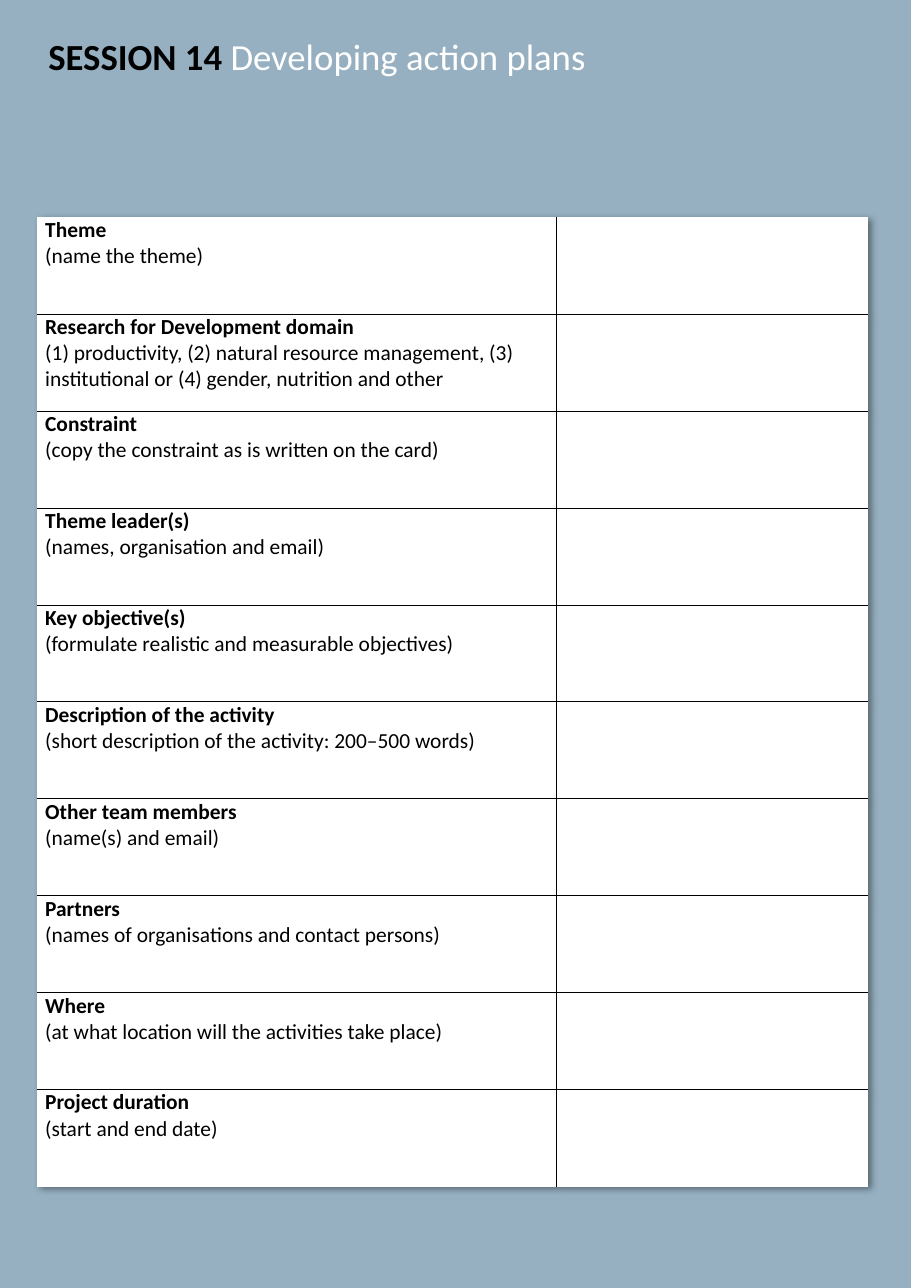
"""Build the action plan form for session 14."""
from lxml.etree import SubElement
from pptx import Presentation
from pptx.dml.color import RGBColor
from pptx.oxml import parse_xml
from pptx.oxml.ns import nsdecls, qn
from pptx.util import Inches, Pt

COLORS = {"background": "96B0C1", "black": "000000", "white": "FFFFFF"}
FONT = "Calibri"
FIELDS = [
    ("Theme", "(name the theme)"),
    ("Research for Development domain",
     "(1) productivity, (2) natural resource management, (3) "
     "institutional or (4) gender, nutrition and other"),
    ("Constraint", "(copy the constraint as is written on the card)"),
    ("Theme leader(s)", "(names, organisation and email)"),
    ("Key objective(s)", "(formulate realistic and measurable objectives)"),
    ("Description of the activity", "(short description of the activity: 200–500 words)"),
    ("Other team members", "(name(s) and email)"),
    ("Partners", "(names of organisations and contact persons)"),
    ("Where", "(at what location will the activities take place)"),
    ("Project duration", "(start and end date)"),
]
COLUMN_WIDTHS = [4.71, 2.83]
ROW_HEIGHT = 0.88


def add_run(paragraph, text, size, color, bold):
    run = paragraph.add_run()
    run.text = text
    run.font.name = FONT
    run.font.size = Pt(size)
    run.font.bold = bold
    run.font.color.rgb = RGBColor.from_string(COLORS[color])


def set_borders(cell, visible_sides):
    properties = cell._tc.get_or_add_tcPr()
    for side in "LRTB":
        line = SubElement(properties, qn(f"a:ln{side}"), w=str(Pt(0.5)))
        if side in visible_sides:
            fill = SubElement(line, qn("a:solidFill"))
            SubElement(fill, qn("a:srgbClr"), val=COLORS["black"])
        else:
            SubElement(line, qn("a:noFill"))


presentation = Presentation()
presentation.slide_width = Inches(8.27)
presentation.slide_height = Inches(11.69)
slide = presentation.slides.add_slide(presentation.slide_layouts[6])
slide.background.fill.solid()
slide.background.fill.fore_color.rgb = RGBColor.from_string(COLORS["background"])

title = slide.shapes.add_textbox(Inches(0.34), Inches(0.26), Inches(7.58), Inches(0.5))
title.text_frame.word_wrap = True
title_paragraph = title.text_frame.paragraphs[0]
add_run(title_paragraph, "SESSION 14 ", 24, "black", True)
add_run(title_paragraph, "Developing action plans", 24, "white", False)

table = slide.shapes.add_table(
    len(FIELDS), len(COLUMN_WIDTHS), Inches(0.34), Inches(1.97),
    Inches(sum(COLUMN_WIDTHS)), Inches(ROW_HEIGHT * len(FIELDS))).table
table.first_row = False
table.horz_banding = False
table._tbl.tblPr.insert(0, parse_xml(
    f'<a:effectLst {nsdecls("a")}><a:outerShdw blurRad="50800" dist="38100" dir="2700000" '
    f'algn="tl" rotWithShape="0"><a:srgbClr val="{COLORS["black"]}">'
    '<a:alpha val="40000"/></a:srgbClr></a:outerShdw></a:effectLst>'))
for column, width in zip(table.columns, COLUMN_WIDTHS):
    column.width = Inches(width)

for row_index, (heading, hint) in enumerate(FIELDS):
    table.rows[row_index].height = Inches(ROW_HEIGHT)
    top = "T" if row_index > 0 else ""
    bottom = "B" if row_index < len(FIELDS) - 1 else ""
    for column_index, inner_side in enumerate("RL"):
        cell = table.cell(row_index, column_index)
        set_borders(cell, inner_side + top + bottom)
        cell.fill.solid()
        cell.fill.fore_color.rgb = RGBColor.from_string(COLORS["white"])
        cell.margin_left = cell.margin_right = Inches(0.07)
        cell.margin_top = cell.margin_bottom = 0
    label = table.cell(row_index, 0).text_frame
    add_run(label.paragraphs[0], heading, 14, "black", True)
    add_run(label.add_paragraph(), hint, 14, "black", False)

presentation.save("out.pptx")
